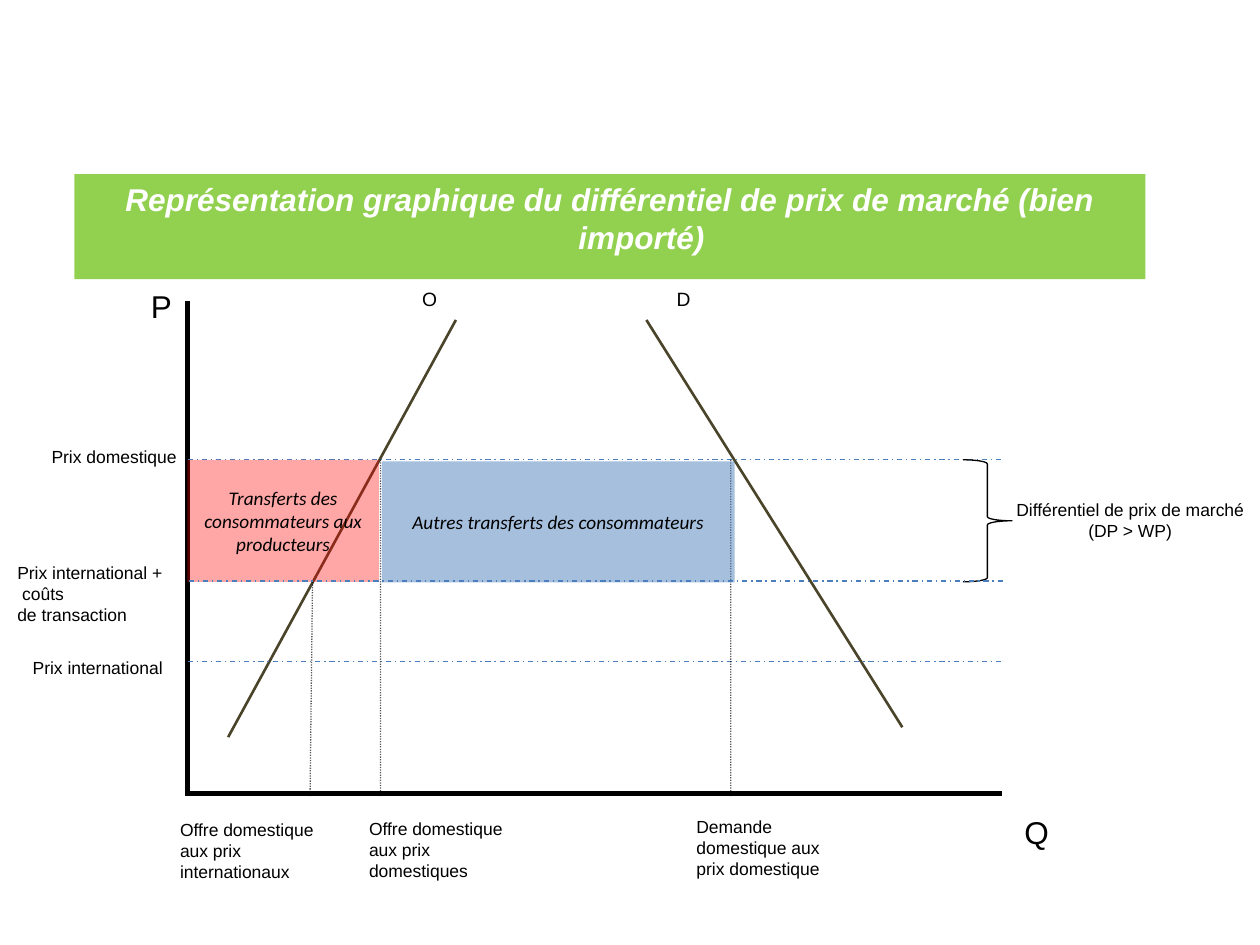
from pptx import Presentation
from pptx.dml.color import RGBColor
from pptx.enum.dml import MSO_LINE
from pptx.enum.shapes import MSO_CONNECTOR, MSO_SHAPE
from pptx.enum.text import MSO_ANCHOR, MSO_AUTO_SIZE, PP_ALIGN
from pptx.oxml.xmlchemy import OxmlElement
from pptx.util import Cm, Pt

BLACK = RGBColor(0x00, 0x00, 0x00)
WHITE = RGBColor(0xFF, 0xFF, 0xFF)
GREEN = RGBColor(0x92, 0xD0, 0x50)
RED = RGBColor(0xFF, 0x00, 0x00)
BLUE = RGBColor(0x4F, 0x81, 0xBD)
PRICE_BLUE = RGBColor(0x4B, 0x7E, 0xBC)
CURVE_BROWN = RGBColor(0x4A, 0x45, 0x2A)

AXIS_X, AXIS_END = 3.78, 20.19
AXIS_TOP, AXIS_BOTTOM = 6.07, 16.05
DOMESTIC_PRICE, IMPORT_PRICE, WORLD_PRICE = 9.27, 11.71, 13.34


def write_text(frame, *lines, size=10, font="Arial", color=BLACK, bold=False,
               italic=False, alignments=(None,)):
    """Fill a text frame, one paragraph per line, in a single format."""
    for index, line in enumerate(lines):
        paragraph = frame.paragraphs[0] if index == 0 else frame.add_paragraph()
        paragraph.alignment = alignments[min(index, len(alignments) - 1)]
        run = paragraph.add_run()
        run.text = line
        run.font.size = Pt(size)
        run.font.name = font
        run.font.color.rgb = color
        run.font.bold = bold
        run.font.italic = italic


def set_opacity(fill_parent, percent):
    """Make the solid colour below an element partly transparent."""
    alpha = OxmlElement("a:alpha")
    alpha.set("val", str(percent * 1000))
    fill_parent.find(".//{*}srgbClr").append(alpha)


class MarketDiagram:
    """Hold the slide and draw each kind of diagram element on it."""

    def __init__(self, slide):
        self.slide = slide

    def title(self, text, left, top, width, height):
        shape = self.slide.shapes.title
        shape.left, shape.top = Cm(left), Cm(top)
        shape.width, shape.height = Cm(width), Cm(height)
        shape.fill.solid()
        shape.fill.fore_color.rgb = GREEN
        frame = shape.text_frame
        frame.word_wrap = True
        frame.auto_size = MSO_AUTO_SIZE.SHAPE_TO_FIT_TEXT
        frame.vertical_anchor = MSO_ANCHOR.TOP
        write_text(frame, text, size=18, color=WHITE, bold=True, italic=True,
                   alignments=(PP_ALIGN.CENTER,))
        paragraph = frame.paragraphs[0]
        paragraph.space_after = Pt(12)
        properties = paragraph._p.get_or_add_pPr()
        properties.set("marL", str(Cm(1.27)))
        properties.set("indent", str(Cm(-1.27)))

    def line(self, start, end, color=BLACK, width=0.75, dash=None, opacity=None):
        connector = self.slide.shapes.add_connector(
            MSO_CONNECTOR.STRAIGHT, *map(Cm, start + end))
        connector.line.color.rgb = color
        connector.line.width = Pt(width)
        if dash is not None:
            connector.line.dash_style = dash
        properties = connector._element.spPr
        if opacity is not None:
            set_opacity(properties, opacity)
        properties.append(OxmlElement("a:effectLst"))

    def price_line(self, height, shift=0):
        self.line((AXIS_X + shift, height), (AXIS_END + shift, height),
                  PRICE_BLUE, dash=MSO_LINE.DASH_DOT)

    def quantity_line(self, top_x, top, bottom_x):
        self.line((top_x, top), (bottom_x, AXIS_BOTTOM),
                  dash=MSO_LINE.ROUND_DOT, opacity=65)

    def label(self, *lines, left, top, width, height, wrap=False, **text_format):
        box = self.slide.shapes.add_textbox(*map(Cm, (left, top, width, height)))
        box.text_frame.word_wrap = wrap
        box.text_frame.auto_size = MSO_AUTO_SIZE.SHAPE_TO_FIT_TEXT
        write_text(box.text_frame, *lines, **text_format)

    def area(self, text, left, top, width, height, color, opacity):
        shape = self.slide.shapes.add_shape(
            MSO_SHAPE.RECTANGLE, *map(Cm, (left, top, width, height)))
        shape.shadow.inherit = False
        shape.fill.solid()
        shape.fill.fore_color.rgb = color
        set_opacity(shape._element.spPr, opacity)
        shape.line.fill.background()
        shape.text_frame.word_wrap = True
        shape.text_frame.vertical_anchor = MSO_ANCHOR.MIDDLE
        write_text(shape.text_frame, text, size=11, font="Calibri", italic=True,
                   alignments=(PP_ALIGN.CENTER,))

    def brace(self, left, top, width, height):
        shape = self.slide.shapes.add_shape(
            MSO_SHAPE.RIGHT_BRACE, *map(Cm, (left, top, width, height)))
        shape.shadow.inherit = False
        shape.fill.background()
        shape.line.color.rgb = BLACK
        shape.line.width = Pt(0.75)


def main():
    """Build the market price differential slide."""
    presentation = Presentation()
    presentation.slide_width, presentation.slide_height = Cm(25.4), Cm(19.05)
    slide = presentation.slides.add_slide(presentation.slide_layouts[5])
    diagram = MarketDiagram(slide)

    diagram.title("Représentation graphique du différentiel de prix de marché (bien importé)",
                  1.5, 3.51, 21.59, 1.8)

    diagram.line((AXIS_X, AXIS_TOP), (AXIS_X, AXIS_BOTTOM), width=3)
    diagram.line((AXIS_X, 16), (AXIS_END, 16), width=3)
    diagram.line((4.6, 14.86), (9.19, 6.45), CURVE_BROWN, 1.5)
    diagram.line((13.03, 6.45), (18.19, 14.66), CURVE_BROWN, 1.5)
    diagram.price_line(WORLD_PRICE)
    diagram.price_line(DOMESTIC_PRICE)

    diagram.quantity_line(7.67, DOMESTIC_PRICE, 7.67)
    diagram.quantity_line(6.3, 11.73, 6.25)
    diagram.quantity_line(14.73, DOMESTIC_PRICE, 14.73)

    diagram.area("Transferts des consommateurs aux producteurs",
                 AXIS_X, DOMESTIC_PRICE, 3.86, 2.46, RED, 35)
    diagram.area("Autres transferts des consommateurs", 7.7, 9.3, 7.11, 2.44, BLUE, 50)
    diagram.brace(19.41, DOMESTIC_PRICE, 0.99, 2.46)
    diagram.price_line(IMPORT_PRICE, shift=0.03)

    for text, left, top, width, height, size in (
            ("P", 2.79, 5.66, 0.94, 1.02, 18),
            ("Q", 20.4, 16.26, 1.02, 1.02, 18),
            ("O", 8.26, 5.66, 0.81, 0.74, 11),
            ("D", 13.39, 5.66, 0.79, 0.74, 11),
            ("Prix international", 0.41, 13.11, 3.15, 0.69, 10),
            ("Prix domestique", 0.79, 8.86, 3.05, 0.69, 10)):
        diagram.label(text, left=left, top=top, width=width, height=height, size=size)

    diagram.label("Prix international +", " coûts", "de transaction",
                  left=0.1, top=11.2, width=3.45, height=1.55)
    diagram.label("Différentiel de prix de marché", "(DP > WP)",
                  left=20.24, top=9.93, width=5.16, height=1.12,
                  alignments=(None, PP_ALIGN.CENTER))

    for text, left, top, width in (
            ("Offre domestique aux prix internationaux", 3.38, 16.38, 3.43),
            ("Offre domestique aux prix domestiques", 7.19, 16.36, 3.33),
            ("Demande domestique aux prix domestique", 13.79, 16.33, 3.28)):
        diagram.label(text, left=left, top=top, width=width, height=1.55, wrap=True)

    presentation.save("out.pptx")


if __name__ == "__main__":
    main()
